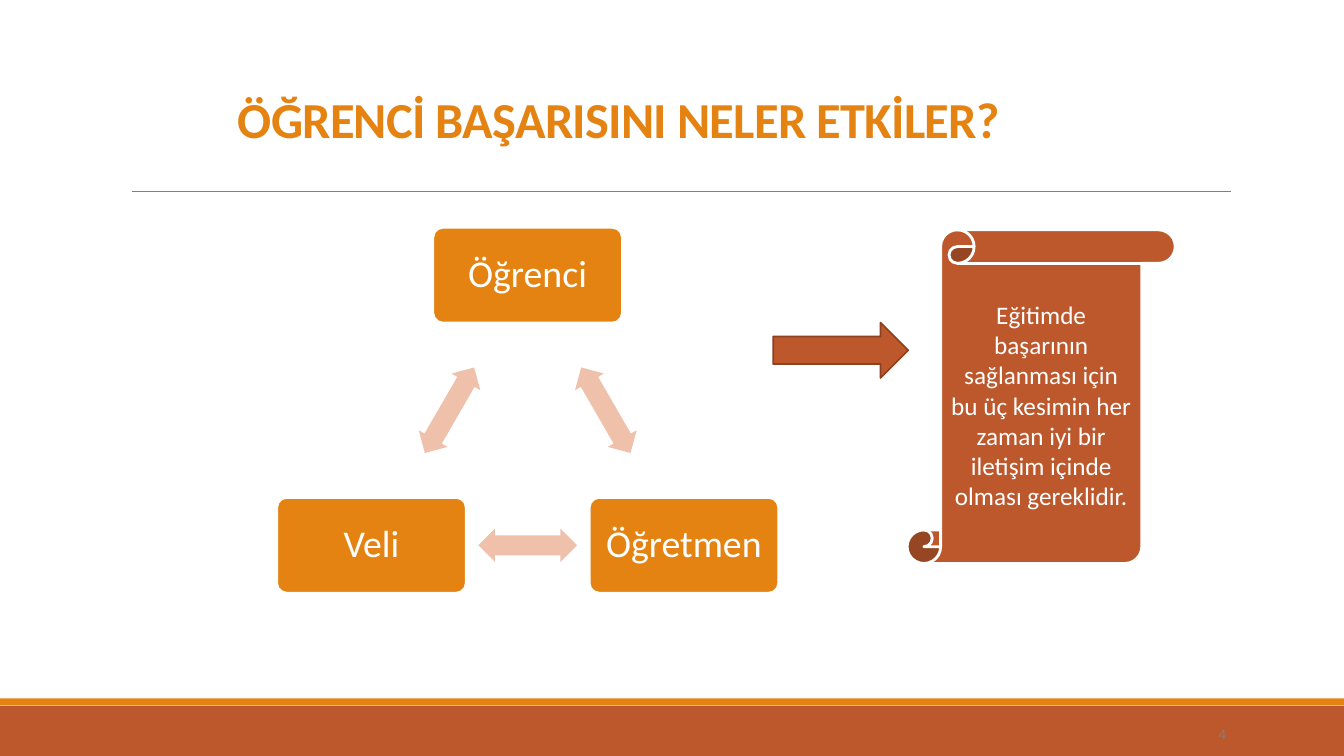
import dataclasses
import typing

import pptx
import pptx.dml.color
import pptx.enum.shapes
import pptx.enum.text
import pptx.oxml.ns
import pptx.util
import lxml.etree

SHAPES = pptx.enum.shapes.MSO_SHAPE
ALIGN = pptx.enum.text.PP_ALIGN
ANCHOR = pptx.enum.text.MSO_ANCHOR

SLIDE_WIDTH = pptx.util.Inches(13.333)
SLIDE_HEIGHT = pptx.util.Inches(7.5)
FONT = "Calibri"
COLORS = {
    "orange": "E48312",
    "rust": "BD582C",
    "dark rust": "8C4121",
    "peach": "EFC1AB",
    "gray": "808080",
    "white": "FFFFFF",
}


@dataclasses.dataclass(frozen=True)
class Box:
    """Position and size in percent of the slide's width and height."""
    left: float
    top: float
    width: float
    height: float

    def lengths(self) -> tuple[int, int, int, int]:
        return (across(self.left), down(self.top),
                across(self.width), down(self.height))


@dataclasses.dataclass(frozen=True)
class Card:
    label: str
    center_x: float
    center_y: float


@dataclasses.dataclass(frozen=True)
class Label:
    text: str
    size: float
    color: str = "white"
    bold: bool = False
    align: typing.Any = ALIGN.CENTER
    anchor: typing.Any = ANCHOR.MIDDLE
    line_spacing: float = 1.0
    margin: float = 0.1


def across(percent: float) -> int:
    return round(SLIDE_WIDTH * percent / 100)


def down(percent: float) -> int:
    return round(SLIDE_HEIGHT * percent / 100)


def rgb(name: str) -> pptx.dml.color.RGBColor:
    return pptx.dml.color.RGBColor.from_string(COLORS[name])


def centered(x: float, y: float, width: float, height: float) -> Box:
    return Box(x - width / 2, y - height / 2, width, height)


def write(shape: typing.Any, label: Label) -> None:
    frame = shape.text_frame
    frame.word_wrap = True
    frame.vertical_anchor = label.anchor
    frame.margin_left = frame.margin_right = pptx.util.Inches(label.margin)
    frame.text = label.text
    paragraph = frame.paragraphs[0]
    paragraph.alignment = label.align
    paragraph.line_spacing = label.line_spacing
    font = paragraph.runs[0].font
    font.name = FONT
    font.size = pptx.util.Pt(label.size)
    font.bold = label.bold
    font.color.rgb = rgb(label.color)


def add_block(slide: typing.Any, kind: typing.Any, box: Box, fill: str,
              line: str | None = None, line_width: float = 1.25,
              adjustments: tuple[float, ...] = (), rotation: float = 0,
              label: Label | None = None) -> None:
    shape = slide.shapes.add_shape(kind, *box.lengths())
    shape.shadow.inherit = False
    shape.rotation = rotation
    for index, value in enumerate(adjustments):
        shape.adjustments[index] = value
    shape.fill.solid()
    shape.fill.fore_color.rgb = rgb(fill)
    if line:
        shape.line.color.rgb = rgb(line)
        shape.line.width = pptx.util.Pt(line_width)
    else:
        shape.line.fill.background()
    if label:
        write(shape, label)


def add_label(slide: typing.Any, box: Box, label: Label) -> typing.Any:
    shape = slide.shapes.add_textbox(*box.lengths())
    write(shape, label)
    return shape


def add_rule(slide: typing.Any, left: float, right: float, y: float) -> None:
    rule = slide.shapes.add_connector(
        pptx.enum.shapes.MSO_CONNECTOR.STRAIGHT,
        across(left), down(y), across(right), down(y))
    rule.line.color.rgb = rgb("gray")
    rule.line.width = pptx.util.Pt(0.5)
    lxml.etree.SubElement(rule.element.spPr, pptx.oxml.ns.qn("a:effectLst"))


CARDS = [
    Card("Öğrenci", 39.26, 36.4),
    Card("Öğretmen", 50.89, 72.13),
    Card("Veli", 27.64, 72.13),
]


def add_cycle(slide: typing.Any) -> None:
    """Draw each card and the arrow halfway to the next one."""
    for index, card in enumerate(CARDS):
        following = CARDS[(index + 1) % len(CARDS)]
        add_block(slide, SHAPES.ROUNDED_RECTANGLE,
                  centered(card.center_x, card.center_y, 14.03, 12.53),
                  "orange", "white", adjustments=(0.1,),
                  label=Label(card.label, 27, line_spacing=0.9))
        add_block(slide, SHAPES.LEFT_RIGHT_ARROW,
                  centered((card.center_x + following.center_x) / 2,
                           (card.center_y + following.center_y) / 2,
                           7.35, 4.4),
                  "peach", adjustments=(0.6, 0.5), rotation=60 + 120 * index)


def main() -> None:
    presentation = pptx.Presentation()
    presentation.slide_width = SLIDE_WIDTH
    presentation.slide_height = SLIDE_HEIGHT
    slide = presentation.slides.add_slide(presentation.slide_layouts[6])

    # Footer bands and rule under the title
    add_block(slide, SHAPES.RECTANGLE, Box(0, 93.33, 100, 6.67), "rust")
    add_block(slide, SHAPES.RECTANGLE, Box(0, 92.4, 100, 0.88), "orange")
    add_rule(slide, 9.83, 91.58, 25.33)

    # Title, with slightly tightened letters
    title = add_label(
        slide, Box(16.95, 3.73, 67.5, 16.67),
        Label("ÖĞRENCİ BAŞARISINI NELER ETKİLER?", 36, "orange", bold=True,
              align=ALIGN.LEFT, anchor=ANCHOR.BOTTOM, line_spacing=0.85))
    for properties in title.element.xpath(".//a:rPr"):
        properties.set("spc", "-50")

    # Three parties and their links
    add_cycle(slide)

    # Conclusion
    add_block(slide, SHAPES.RIGHT_ARROW, Box(57.53, 42.67, 10.05, 7.33),
              "rust", "dark rust")
    add_block(slide, SHAPES.VERTICAL_SCROLL, Box(67.5, 30.4, 19.95, 44.13),
              "rust", "white", line_width=2,
              label=Label("Eğitimde başarının sağlanması için bu üç kesimin "
                          "her zaman iyi bir iletişim içinde olması "
                          "gereklidir.", 18))

    # Slide number
    add_label(slide, Box(81.95, 94.4, 10, 5.33),
              Label("4", 10.5, "gray", align=ALIGN.RIGHT))

    presentation.save("out.pptx")


if __name__ == "__main__":
    main()
